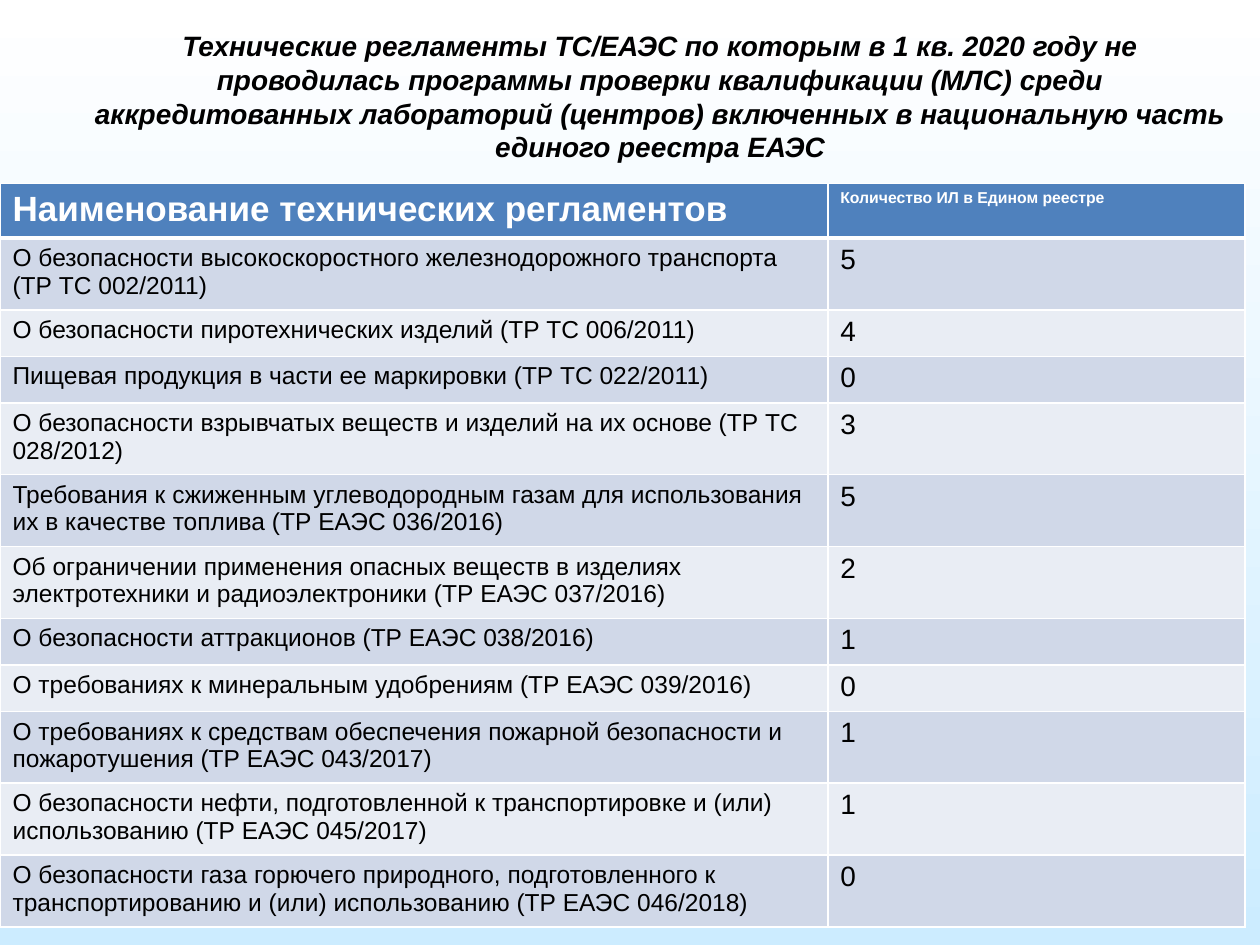
from lxml import etree
from pptx import Presentation, util as u
from pptx.dml.color import RGBColor
from pptx.enum import text
from pptx.oxml.ns import qn

THEME = {
    "font": "Arial",
    "black": "000000", "white": "FFFFFF", "sky": "CCECFF",
    "head": "4F81BD", "bands": ("D0D8E8", "E9EDF4"),
    "title": 16, "heads": (20, 9), "body": (14, 16),
}
HEADS = ("Наименование технических регламентов", "Количество ИЛ в Едином реестре")
# Regulation, number of laboratories, lines of text in the row
ROWS = [
    ("О безопасности высокоскоростного железнодорожного транспорта (ТР ТС 002/2011)", 5, 2),
    ("О безопасности пиротехнических изделий (ТР ТС 006/2011)", 4, 1),
    ("Пищевая продукция в части ее маркировки (ТР ТС 022/2011)", 0, 1),
    ("О безопасности взрывчатых веществ и изделий на их основе (ТР ТС 028/2012)", 3, 2),
    ("Требования к сжиженным углеводородным газам для использования их в качестве топлива "
     "(ТР ЕАЭС 036/2016)", 5, 2),
    ("Об ограничении применения опасных веществ в изделиях электротехники и радиоэлектроники "
     "(ТР ЕАЭС 037/2016)", 2, 2),
    ("О безопасности аттракционов (ТР ЕАЭС 038/2016)", 1, 1),
    ("О требованиях к минеральным удобрениям (ТР ЕАЭС 039/2016)", 0, 1),
    ("О требованиях к средствам обеспечения пожарной безопасности и пожаротушения "
     "(ТР ЕАЭС 043/2017)", 1, 2),
    ("О безопасности нефти, подготовленной к транспортировке и (или) использованию "
     "(ТР ЕАЭС 045/2017)", 1, 2),
    ("О безопасности газа горючего природного, подготовленного к транспортированию и (или) "
     "использованию (ТР ЕАЭС 046/2018)", 0, 2),
]
HEAD_HEIGHT, LINE_HEIGHTS = 0.43, {1: 0.37, 2: 0.57}


def write(tf, words, size, color, align=text.PP_ALIGN.LEFT, **style):
    p = tf.paragraphs[0]
    p.alignment = align
    r = p.add_run()
    r.text = words
    for name, value in {"name": THEME["font"], "size": u.Pt(size), **style}.items():
        setattr(r.font, name, value)
    r.font.color.rgb = RGBColor.from_string(color)


def paint(cell, fill, bottom=1):
    tcPr = cell._tc.get_or_add_tcPr()
    for side, width in {"lnL": 1, "lnR": 1, "lnT": 1, "lnB": bottom}.items():
        ln = etree.SubElement(tcPr, qn("a:" + side), w=str(u.Pt(width)))
        solid = etree.SubElement(ln, qn("a:solidFill"))
        etree.SubElement(solid, qn("a:srgbClr"), val=THEME["white"])
    cell.fill.solid()
    cell.fill.fore_color.rgb = RGBColor.from_string(fill)


prs = Presentation()
prs.slide_width, prs.slide_height = u.Inches(10), u.Inches(7.5)
W, H = prs.slide_width, prs.slide_height
s = prs.slides.add_slide(prs.slide_layouts[6])

# Background fading from white down to sky blue
bg = s.background.fill
bg.gradient()
bg.gradient_angle = 270
for stop, position, color in zip(bg.gradient_stops, (0, 1), (THEME["white"], THEME["sky"])):
    stop.position = position
    stop.color.rgb = RGBColor.from_string(color)

# Title
tf = s.shapes.add_textbox(int(W * 0.059), int(H * 0.024), int(W * 0.93), int(H * 0.157)).text_frame
tf.word_wrap = True
write(tf, "Технические регламенты ТС/ЕАЭС по которым в 1 кв. 2020 году не проводилась программы "
      "проверки квалификации (МЛС) среди аккредитованных лабораторий (центров) включенных в "
      "национальную часть единого реестра ЕАЭС",
      THEME["title"], THEME["black"], text.PP_ALIGN.CENTER, bold=True, italic=True)

# Table grid
heights = [HEAD_HEIGHT] + [LINE_HEIGHTS[lines] for *_, lines in ROWS]
table = s.shapes.add_table(len(heights), len(HEADS), 0, int(H * 0.194), int(W * 0.988),
                           u.Inches(sum(heights))).table
for column, share in zip(table.columns, (0.657, 0.331)):
    column.width = int(W * share)
for row, height in zip(table.rows, heights):
    row.height = u.Inches(height)

# Header row
for cell, words, size in zip(table.rows[0].cells, HEADS, THEME["heads"]):
    paint(cell, THEME["head"], bottom=3)
    write(cell.text_frame, words, size, THEME["white"], bold=True)

# Banded body rows
for i, (regulation, count, _) in enumerate(ROWS):
    for cell, words, size in zip(table.rows[i + 1].cells, (regulation, str(count)), THEME["body"]):
        paint(cell, THEME["bands"][i % 2])
        write(cell.text_frame, words, size, THEME["black"], bold=False)

prs.save("out.pptx")
